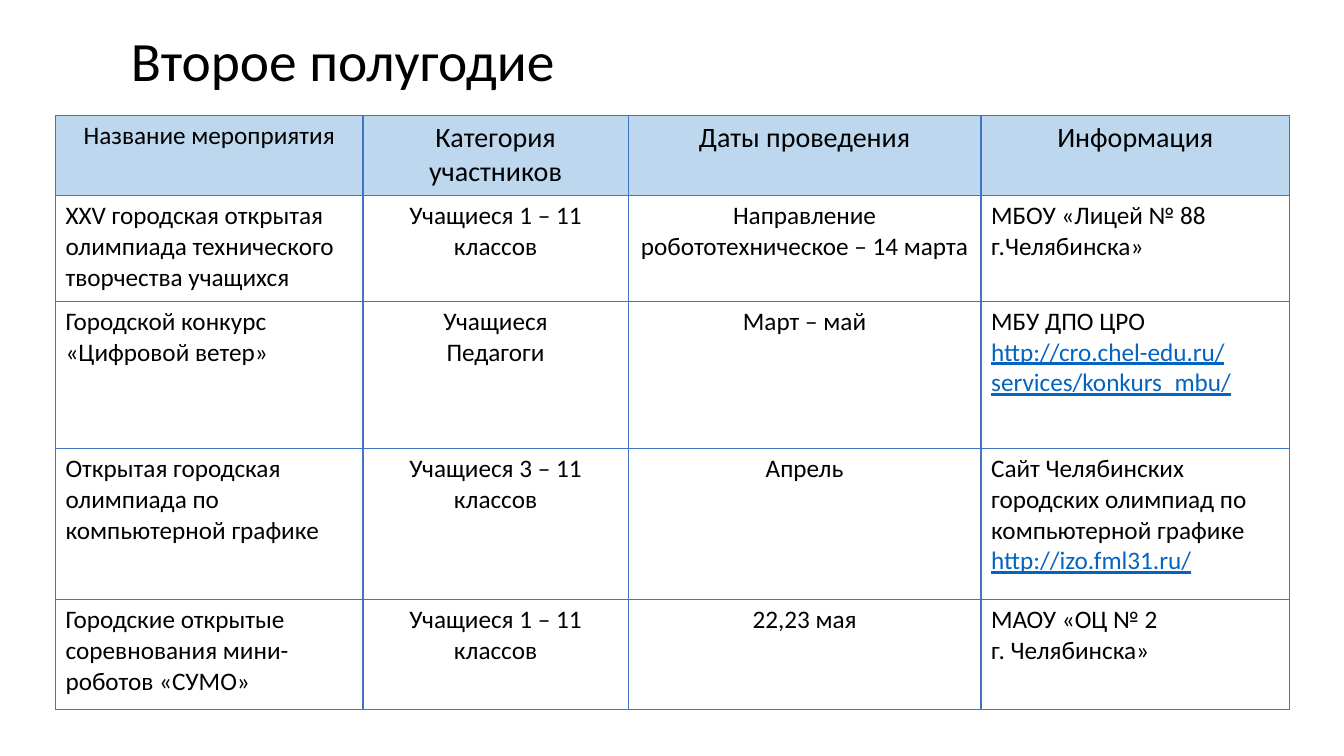
from dataclasses import dataclass

from lxml.etree import SubElement
from pptx import Presentation
from pptx.dml.color import RGBColor as Color
from pptx.enum.text import MSO_ANCHOR as Anchor, PP_ALIGN as Align
from pptx.oxml.ns import qn
from pptx.util import Inches, Pt


@dataclass(frozen=True)
class Theme:
    font: str = "Calibri"
    text: str = "000000"
    link: str = "0563C1"
    border: str = "4472C4"
    header_fill: str = "BDD7EE"
    body_fill: str = "FFFFFF"
    title_size: float = 39.6
    header_size: int = 20
    body_size: int = 18
    border_width: int = 1


THEME = Theme()
WIDTH, HEIGHT = Inches(13.33), Inches(7.5)

# Table grid, in percent of the slide's width and height
TABLE_LEFT, TABLE_TOP = 4.13, 15.33
COLUMNS = [22.88, 19.73, 26.26, 22.96]
ROWS = [10.53, 14, 19.47, 20, 14.53]
CENTRED_COLUMNS = (1, 2)

HEADERS = ["Название мероприятия", "Категория участников", "Даты проведения", "Информация"]
EVENTS = [
    ["XXV городская открытая олимпиада технического творчества учащихся",
     "Учащиеся 1 – 11 классов",
     "Направление\nробототехническое – 14 марта",
     "МБОУ «Лицей № 88 г.Челябинска»"],
    ["Городской конкурс «Цифровой ветер»",
     "Учащиеся\nПедагоги",
     "Март – май",
     "МБУ ДПО ЦРО\nhttp://cro.chel-edu.ru/services/konkurs_mbu/"],
    ["Открытая городская олимпиада по компьютерной графике",
     "Учащиеся 3 – 11 классов",
     "Апрель",
     "Сайт Челябинских городских олимпиад по компьютерной графике\nhttp://izo.fml31.ru/"],
    ["Городские открытые соревнования мини-роботов «СУМО»",
     "Учащиеся 1 – 11 классов",
     "22,23 мая",
     "МАОУ «ОЦ № 2\nг. Челябинска»"],
]


def across(percent):
    return round(WIDTH * percent / 100)


def down(percent):
    return round(HEIGHT * percent / 100)


def write(frame, text, size, align=Align.LEFT):
    """Fill a text frame; paragraphs that are web addresses look like links."""
    frame.text = text
    for para in frame.paragraphs:
        para.alignment = align
        for span in para.runs:
            is_link = span.text.startswith("http")
            span.font.name = THEME.font
            span.font.size = Pt(size)
            span.font.underline = is_link
            span.font.color.rgb = Color.from_string(THEME.link if is_link else THEME.text)


def add_title(page, text):
    box = page.shapes.add_textbox(across(9), down(4.13), across(82.52), down(8.67))
    frame = box.text_frame
    frame.word_wrap = True
    frame.vertical_anchor = Anchor.MIDDLE
    write(frame, text, THEME.title_size)
    frame.paragraphs[0].line_spacing = 0.9


def style_cell(cell, fill):
    # Borders come before the fill in the cell's properties
    properties = cell._tc.get_or_add_tcPr()
    for side in ("a:lnL", "a:lnR", "a:lnT", "a:lnB"):
        line = SubElement(properties, qn(side), w=str(Pt(THEME.border_width)))
        SubElement(SubElement(line, qn("a:solidFill")), qn("a:srgbClr"), val=THEME.border)
    cell.fill.solid()
    cell.fill.fore_color.rgb = Color.from_string(fill)


def add_events_table(page):
    table = page.shapes.add_table(
        len(ROWS), len(COLUMNS), across(TABLE_LEFT), down(TABLE_TOP),
        across(sum(COLUMNS)), down(sum(ROWS))).table
    table.first_row = table.horz_banding = False
    for column, share in zip(table.columns, COLUMNS):
        column.width = across(share)
    for row, share in zip(table.rows, ROWS):
        row.height = down(share)

    for row_index, texts in enumerate([HEADERS, *EVENTS]):
        is_header = row_index == 0
        for column_index, text in enumerate(texts):
            cell = table.cell(row_index, column_index)
            centred = is_header or column_index in CENTRED_COLUMNS
            large = is_header and column_index > 0
            style_cell(cell, THEME.header_fill if is_header else THEME.body_fill)
            write(cell.text_frame, text,
                  THEME.header_size if large else THEME.body_size,
                  Align.CENTER if centred else Align.LEFT)


def main():
    deck = Presentation()
    deck.slide_width, deck.slide_height = WIDTH, HEIGHT
    page = deck.slides.add_slide(deck.slide_layouts[6])
    add_title(page, "Второе полугодие")
    add_events_table(page)
    deck.save("out.pptx")


if __name__ == "__main__":
    main()
